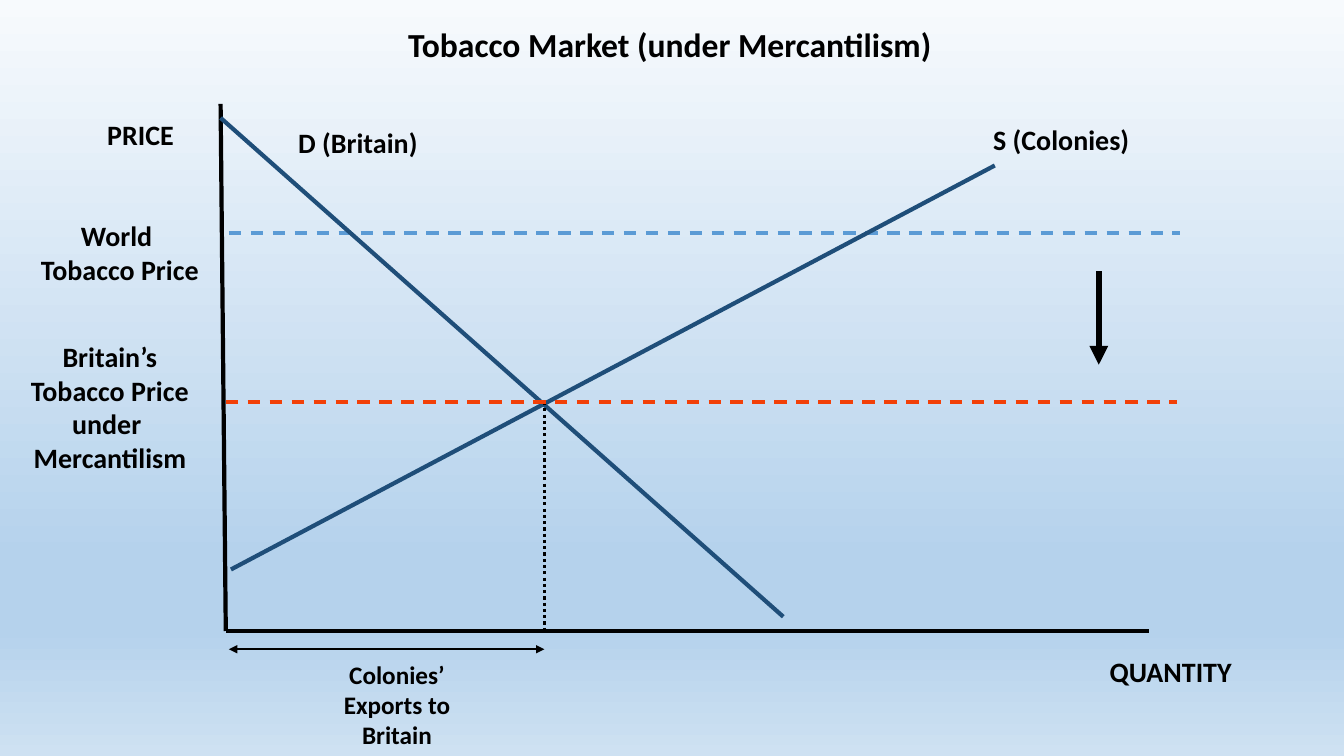
"""Supply and demand diagram of the tobacco market under mercantilism."""
from dataclasses import dataclass

from lxml import etree
from pptx import Presentation
from pptx import util as u
from pptx.dml.color import RGBColor
from pptx.enum import dml, shapes, text
from pptx.oxml.ns import qn


@dataclass(frozen=True)
class Theme:
    font: str = "Calibri"
    ink: str = "000000"
    curve: str = "1F4E79"
    world: str = "5B9BD5"
    mercantile: str = "F24008"
    sky: tuple = ((0, "F7FAFD"), (74, "B5D2EC"), (83, "B5D2EC"), (100, "CEE1F2"))
    title_size: int = 24
    label_size: int = 20
    note_size: int = 18


@dataclass(frozen=True)
class Line:
    start: tuple[float, float]
    end: tuple[float, float]
    color: str
    width: float
    dash: dml.MSO_LINE | None = None
    arrows: tuple[str, ...] = ()


@dataclass(frozen=True)
class Label:
    words: str
    left: float
    top: float
    width: float
    height: float
    size: int


THEME = Theme()
AXIS_X, AXIS_Y = 5.69, 15.9
CROSS_X, CROSS_Y = 13.72, 10.13
WORLD_Y, EXPORTS_Y, FALL_X = 5.87, 16.36, 27.69
DASH, DOT = dml.MSO_LINE.DASH, dml.MSO_LINE.ROUND_DOT

AXES = [
    Line((5.56, 2.62), (AXIS_X, AXIS_Y), THEME.ink, 3),
    Line((AXIS_X, AXIS_Y), (28.96, AXIS_Y), THEME.ink, 3),
]
CURVES = [
    Line((5.77, WORLD_Y), (29.74, WORLD_Y), THEME.world, 2.25, DASH),
    Line((5.82, 14.35), (25.07, 4.17), THEME.curve, 3),
    Line((5.56, 2.97), (19.74, 15.54), THEME.curve, 3),
    Line((CROSS_X, CROSS_Y), (CROSS_X, AXIS_Y), THEME.ink, 2.25, DOT),
    Line((AXIS_X, CROSS_Y), (29.67, CROSS_Y), THEME.mercantile, 2.25, DASH),
]
ARROWS = [
    Line((5.77, EXPORTS_Y), (CROSS_X, EXPORTS_Y), THEME.ink, 1.5,
         arrows=("headEnd", "tailEnd")),
    Line((FALL_X, 6.83), (FALL_X, 9.19), THEME.ink, 4.5, arrows=("tailEnd",)),
]
TITLE = Label("Tobacco Market (under Mercantilism)", 5.77, 0.48, 22.22, 1.27,
              THEME.title_size)
LABELS = [
    Label("Colonies’ Exports to Britain", 7.82, 16.48, 4.37, 3.33, THEME.note_size),
    Label("D (Britain)", 6.15, 3.05, 5.74, 1.12, THEME.label_size),
    Label("S (Colonies)", 23.62, 2.95, 6.25, 1.12, THEME.label_size),
    Label("World \nTobacco Price", -0.51, 5.38, 7.06, 1.96, THEME.label_size),
    Label("Britain’s\n Tobacco Price \nunder \nMercantilism",
          -0.76, 8.43, 7.06, 3.68, THEME.label_size),
    Label(" PRICE", -0.13, 2.84, 7.19, 1.12, THEME.label_size),
    Label(" QUANTITY", 25.83, 16.36, 7.19, 1.12, THEME.label_size),
]


def write(frame, words: str, *, size: int, color: str = THEME.ink,
          bold: bool = True, align=text.PP_ALIGN.CENTER) -> None:
    """Fill a text frame with one formatted paragraph per line of words."""
    frame.word_wrap = True
    frame.auto_size = text.MSO_AUTO_SIZE.NONE
    frame.vertical_anchor = text.MSO_ANCHOR.TOP
    frame.text = words
    for paragraph in frame.paragraphs:
        paragraph.alignment = align
        for run in paragraph.runs:
            run.font.name = THEME.font
            run.font.size = u.Pt(size)
            run.font.bold = bold
            run.font.color.rgb = RGBColor.from_string(color)


def draw_line(slide, line: Line) -> None:
    """Draw one straight line with its dash and arrowheads."""
    ends = [u.Cm(value) for value in (*line.start, *line.end)]
    connector = slide.shapes.add_connector(shapes.MSO_CONNECTOR.STRAIGHT, *ends)
    connector.line.color.rgb = RGBColor.from_string(line.color)
    connector.line.width = u.Pt(line.width)
    if line.dash is not None:
        connector.line.dash_style = line.dash
    properties = connector.element.spPr
    outline = properties.find(qn("a:ln"))
    for arrow in line.arrows:
        etree.SubElement(outline, qn(f"a:{arrow}"), type="triangle")
    etree.SubElement(properties, qn("a:effectLst"))


def place_title(slide, label: Label) -> None:
    """Move the title placeholder and write its text."""
    title = slide.shapes.title
    title.left, title.top = u.Cm(label.left), u.Cm(label.top)
    title.width, title.height = u.Cm(label.width), u.Cm(label.height)
    write(title.text_frame, label.words, size=label.size)


def draw_label(slide, label: Label) -> None:
    """Add one text box."""
    box = slide.shapes.add_textbox(u.Cm(label.left), u.Cm(label.top),
                                   u.Cm(label.width), u.Cm(label.height))
    write(box.text_frame, label.words, size=label.size)


def paint_sky(slide) -> None:
    """Give the slide its vertical gradient background."""
    fill = slide.background.fill
    fill.gradient()
    fill.gradient_angle = 270
    stops = next(slide.element.iter(qn("a:gsLst")))
    for stop in list(stops):
        stops.remove(stop)
    for percent, color in THEME.sky:
        stop = etree.SubElement(stops, qn("a:gs"), pos=str(percent * 1000))
        etree.SubElement(stop, qn("a:srgbClr"), val=color)


def main() -> None:
    """Build and save the slide."""
    deck = Presentation()
    deck.slide_width, deck.slide_height = u.Cm(33.87), u.Cm(19.05)
    slide = deck.slides.add_slide(deck.slide_layouts.get_by_name("Title Only"))
    paint_sky(slide)
    place_title(slide, TITLE)
    for line in AXES + CURVES + ARROWS:
        draw_line(slide, line)
    for label in LABELS:
        draw_label(slide, label)
    deck.save("out.pptx")


if __name__ == "__main__":
    main()
